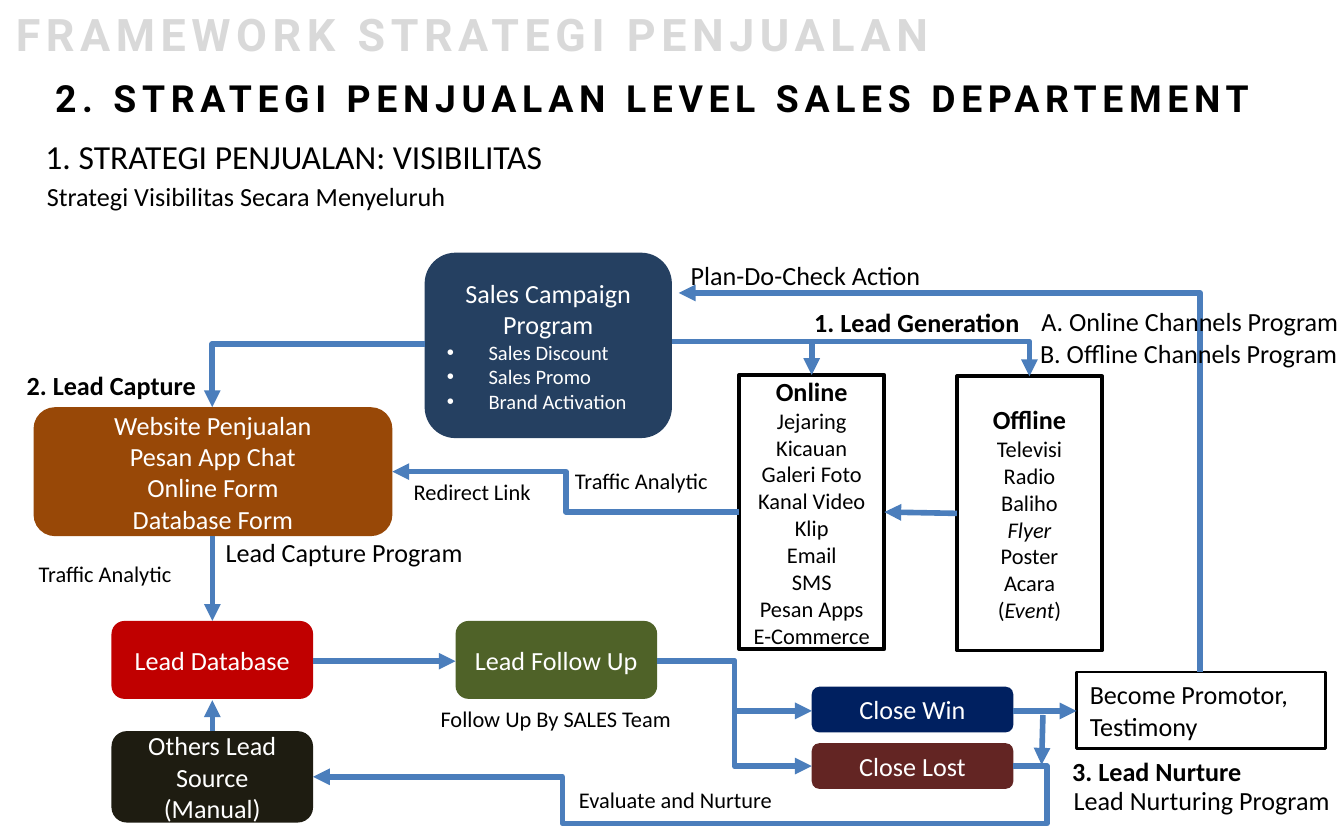
from lxml import etree
from pptx import Presentation
from pptx.dml.color import RGBColor
from pptx.enum.shapes import MSO_CONNECTOR, MSO_SHAPE
from pptx.enum.text import MSO_ANCHOR, MSO_AUTO_SIZE, PP_ALIGN
from pptx.oxml.ns import qn
from pptx.util import Inches, Pt

STRAIGHT, ELBOW = MSO_CONNECTOR.STRAIGHT, MSO_CONNECTOR.ELBOW
RECT, ROUND = MSO_SHAPE.RECTANGLE, MSO_SHAPE.ROUNDED_RECTANGLE
LEFT, CENTER = PP_ALIGN.LEFT, PP_ALIGN.CENTER
TOP, MIDDLE = MSO_ANCHOR.TOP, MSO_ANCHOR.MIDDLE
NO_FIT = MSO_AUTO_SIZE.NONE

COLS, ROWS = 100, 62.5  # grid over the whole slide
COLORS = {
    "text": "000000", "light": "FFFFFF", "faded": "D9D9D9", "arrow": "4B7EBC",
    "campaign": "254061", "capture": "984807", "database": "C00000",
    "follow_up": "4F6228", "win": "002060", "lost": "632523", "others": "1E1C11",
}


class Flowchart:
    """Slide style plus one method for each kind of element."""

    def __init__(self, deck):
        self.slide = deck.slides.add_slide(deck.slide_layouts[5])
        self.col = deck.slide_width / COLS
        self.row = deck.slide_height / ROWS

    def place(self, *cells):
        units = (self.col, self.row, self.col, self.row)
        return [round(cell * unit) for cell, unit in zip(cells, units)]

    def color(self, name):
        return RGBColor.from_string(COLORS[name])

    def style(self, paragraph, size, color="text", bold=False, font="Calibri"):
        for run in paragraph.runs:
            run.font.name = font
            run.font.size = Pt(size)
            run.font.bold = bold
            run.font.color.rgb = self.color(color)

    def heading(self, shape, text, size, color="text"):
        frame = shape.text_frame
        frame.text = text
        frame.word_wrap = True
        frame.auto_size = NO_FIT
        frame.vertical_anchor = TOP
        line = frame.paragraphs[0]
        line.alignment = LEFT
        self.style(line, size, color, True, "Roboto")
        line.runs[0]._r.get_or_add_rPr().set("spc", "300")

    def title(self, text, cells, size):
        holder = self.slide.shapes.title
        holder.left, holder.top, holder.width, holder.height = self.place(*cells)
        self.heading(holder, text, size)

    def banner(self, text, cells, size, color):
        self.heading(self.slide.shapes.add_textbox(*self.place(*cells)), text, size, color)

    def label(self, text, cells, size=14, bold=False, wrap=False):
        frame = self.slide.shapes.add_textbox(*self.place(*cells)).text_frame
        frame.word_wrap = wrap
        frame.text = text
        self.style(frame.paragraphs[0], size, bold=bold)

    def box(self, cells, geometry, fill=None, border=None):
        shape = self.slide.shapes.add_shape(geometry, *self.place(*cells))
        shape.shadow.inherit = False
        if fill:
            shape.fill.solid()
            shape.fill.fore_color.rgb = self.color(fill)
        else:
            shape.fill.background()
        if border:
            shape.line.color.rgb = self.color("text")
            shape.line.width = Pt(border)
        else:
            shape.line.fill.background()
        shape.text_frame.word_wrap = True
        shape.text_frame.vertical_anchor = MIDDLE
        return shape.text_frame

    def step(self, lines, cells, fill, bullets=()):
        frame = self.box(cells, ROUND, fill)
        frame.text = "\n".join([*lines, *bullets])
        for index, paragraph in enumerate(frame.paragraphs):
            listed = index >= len(lines)
            paragraph.alignment = LEFT if listed else CENTER
            if listed:
                props = paragraph._p.get_or_add_pPr()
                props.set("marL", str(Inches(0.31)))
                props.set("indent", str(-Inches(0.31)))
                etree.SubElement(props, qn("a:buFont")).set("typeface", "Arial")
                etree.SubElement(props, qn("a:buChar")).set("char", "•")
            self.style(paragraph, 11 if listed else 14, "light")

    def channel(self, name, items, cells):
        """Channel list; asterisks enclose italic words."""
        frame = self.box(cells, RECT, border=2)
        frame.text = name
        frame.paragraphs[0].alignment = CENTER
        self.style(frame.paragraphs[0], 14, bold=True)
        for item in items:
            paragraph = frame.add_paragraph()
            paragraph.alignment = CENTER
            for index, part in enumerate(item.split("*")):
                if part:
                    run = paragraph.add_run()
                    run.text = part
                    run.font.italic = index % 2 == 1
            self.style(paragraph, 12)

    def note(self, text, cells):
        frame = self.box(cells, RECT, border=1.5)
        frame.vertical_anchor = TOP
        frame.text = text
        frame.paragraphs[0].alignment = LEFT
        self.style(frame.paragraphs[0], 14)

    def arrow(self, start, end, bend=None, adjust=(), arrow_end="tailEnd"):
        kind = ELBOW if bend else STRAIGHT
        link = self.slide.shapes.add_connector(kind, *self.place(*start, *end))
        link.line.color.rgb = self.color("arrow")
        link.line.width = Pt(3)
        props = link._element.spPr
        etree.SubElement(props.find(qn("a:ln")), qn("a:" + arrow_end)).set("type", "triangle")
        etree.SubElement(props, qn("a:effectLst"))
        if bend:
            geometry = props.find(qn("a:prstGeom"))
            geometry.set("prst", f"bentConnector{bend}")
            guides = geometry.find(qn("a:avLst"))
            for number, share in enumerate(adjust, 1):
                guide = etree.SubElement(guides, qn("a:gd"))
                guide.set("name", f"adj{number}")
                guide.set("fmla", f"val {round(share * 100000)}")


def main():
    deck = Presentation()
    deck.slide_width, deck.slide_height = Inches(10), Inches(6.25)
    chart = Flowchart(deck)

    # Headings
    chart.banner("FRAMEWORK STRATEGI PENJUALAN", (0.2, 0, 100, 5), 24, "faded")
    chart.title("2. STRATEGI PENJUALAN LEVEL SALES DEPARTEMENT", (3.1, 5.1, 98.6, 4.4), 20)
    chart.label("1. STRATEGI PENJUALAN: VISIBILITAS", (2.4, 9.6, 39.3, 4), 18)
    chart.label("Strategi Visibilitas Secara Menyeluruh", (2.5, 12.9, 86.7, 3.4), wrap=True)

    # Process steps
    chart.step(["Sales Campaign Program"], (31.6, 18.8, 18.4, 13.8), "campaign",
               ["Sales Discount", "Sales Promo", "Brand Activation"])
    chart.step(["Website Penjualan", "Pesan App Chat", "Online Form", "Database Form"],
               (2.5, 30.3, 26.7, 9.6), "capture")
    for name, left, top, height, fill in (
        ("Lead Database", 8.3, 46.2, 5.8, "database"),
        ("Lead Follow Up", 33.9, 46.2, 5.8, "follow_up"),
        ("Close Win", 60.4, 51.1, 3.4, "win"),
        ("Close Lost", 60.4, 55.3, 3.4, "lost"),
        ("Others Lead Source (Manual)", 8.3, 54.4, 6.8, "others"),
    ):
        chart.step([name], (left, top, 15, height), fill)

    # Channels and outcome
    chart.channel("Online", ["Jejaring", "Kicauan", "Galeri Foto", "Kanal Video", "Klip",
                             "Email", "SMS", "Pesan Apps", "E-Commerce"],
                  (55, 27.9, 10.8, 20.4))
    chart.channel("Offline", ["Televisi", "Radio", "Baliho", "*Flyer*", "Poster",
                              "Acara (*Event*)"], (71.2, 28, 10.8, 20.4))
    chart.note("Become Promotor, Testimony", (80.1, 50, 18.5, 5.7))

    # Straight arrows
    for start, end in (
        ((15.8, 39.9), (15.8, 46.2)),
        ((23.3, 49.2), (33.9, 49.2)),
        ((15.8, 54.4), (15.8, 52.1)),
        ((75.4, 52.9), (80.1, 52.9)),
        ((77.6, 53.2), (77.5, 56.9)),
        ((71.2, 38.2), (65.8, 38.1)),
    ):
        chart.arrow(start, end)

    # Bent arrows
    for start, end, bend in (
        ((55, 38.1), (29.2, 35.1), 3),
        ((48.9, 49.2), (60.4, 52.9), 3),
        ((48.9, 49.2), (60.4, 57), 3),
        ((50, 25.4), (60.4, 27.9), 2),
        ((60.2, 25.4), (76.6, 28), 2),
        ((31.6, 25.6), (15.8, 30.3), 2),
    ):
        chart.arrow(start, end, bend)
    chart.arrow((50.5, 21.8), (89.3, 50), 2, arrow_end="headEnd")
    chart.arrow((75.4, 57), (23.3, 57.8), 5, (-0.048, 5.35, 0.644))

    # Flow labels
    for text, left, top, width in (
        ("Redirect Link", 29.8, 35.1, 10.8),
        ("Follow Up By SALES Team", 31.8, 52, 19.4),
        ("Evaluate and Nurture", 42.1, 58, 19.6),
        ("Traffic Analytic", 41.8, 34.3, 12),
        ("Traffic Analytic", 1.9, 41.2, 12),
    ):
        chart.label(text, (left, top, width, 3), 12)

    # Stages and their programs
    for text, left, top, width, bold in (
        ("1. Lead Generation", 59.6, 22.3, 17.4, True),
        ("2. Lead Capture", 1, 27, 14.7, True),
        ("3. Lead Nurture", 78.8, 55.7, 14.7, True),
        ("Plan-Do-Check Action", 50.4, 18.8, 19.3, False),
        ("A. Online Channels Program", 76.5, 22.2, 24.3, False),
        ("B. Offline Channels Program", 76.4, 24.6, 24.4, False),
        ("Lead Capture Program", 15.8, 39.4, 19.8, False),
        ("Lead Nurturing Program", 78.9, 57.9, 21.2, False),
    ):
        chart.label(text, (left, top, width, 3.4), bold=bold)

    deck.save("out.pptx")


if __name__ == "__main__":
    main()
